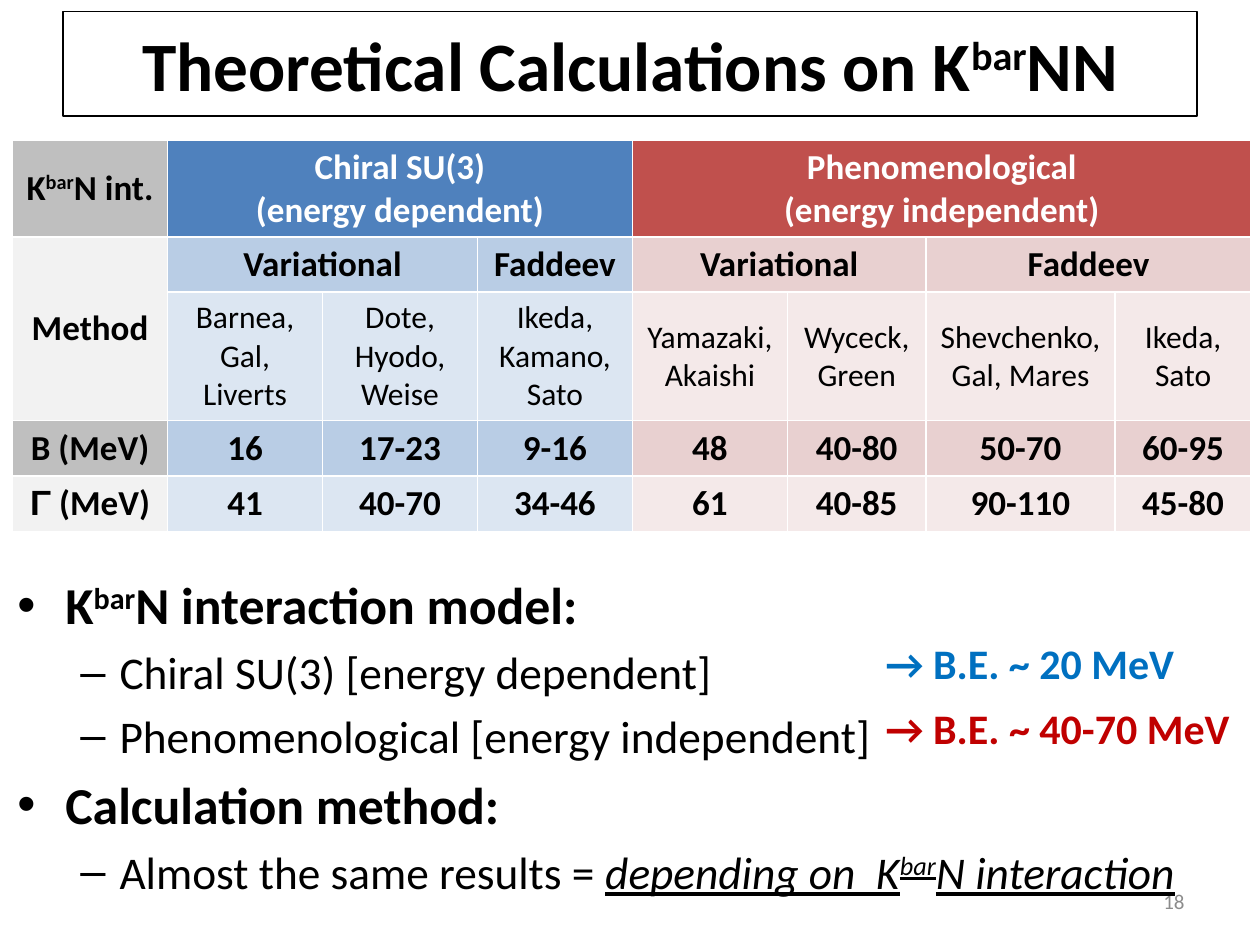
import pptx
import pptx.dml.color
import pptx.enum.text
import pptx.oxml
import pptx.oxml.ns
import pptx.util

Inches = pptx.util.Inches
Pt = pptx.util.Pt
RGBColor = pptx.dml.color.RGBColor
PP_ALIGN = pptx.enum.text.PP_ALIGN
MSO_ANCHOR = pptx.enum.text.MSO_ANCHOR
MSO_AUTO_SIZE = pptx.enum.text.MSO_AUTO_SIZE

BLACK = RGBColor(0x00, 0x00, 0x00)
WHITE = RGBColor(0xFF, 0xFF, 0xFF)
GRAY = RGBColor(0x8C, 0x8C, 0x8C)
BLUE = RGBColor(0x00, 0x70, 0xC0)
RED = RGBColor(0xC0, 0x00, 0x00)
LABEL_DARK = RGBColor(0xBF, 0xBF, 0xBF)
LABEL_LIGHT = RGBColor(0xF2, 0xF2, 0xF2)
CHIRAL = RGBColor(0x4F, 0x81, 0xBD)
CHIRAL_DARK = RGBColor(0xB9, 0xCD, 0xE5)
CHIRAL_LIGHT = RGBColor(0xDC, 0xE6, 0xF2)
PHENO = RGBColor(0xC0, 0x50, 0x4D)
PHENO_DARK = RGBColor(0xE8, 0xD0, 0xD0)
PHENO_LIGHT = RGBColor(0xF4, 0xE9, 0xE9)

TITLE = "Theoretical Calculations on K|^bar|NN"
ROWS = [
    ["K|^bar|N int.", "Chiral SU(3)\n(energy dependent)", None, None,
     "Phenomenological\n(energy independent)", None, None, None],
    ["Method", "Variational", None, "Faddeev", "Variational", None, "Faddeev", None],
    [None, "Barnea, Gal, Liverts", "Dote, Hyodo, Weise", "Ikeda, Kamano, Sato",
     "Yamazaki, Akaishi", "Wyceck, Green", "Shevchenko, Gal, Mares", "Ikeda, Sato"],
    ["B (MeV)", "16", "17-23", "9-16", "48", "40-80", "50-70", "60-95"],
    ["Γ| (MeV)", "41", "40-70", "34-46", "61", "40-85", "90-110", "45-80"],
]
MERGES = [((0, 1), (0, 3)), ((0, 4), (0, 7)), ((1, 0), (2, 0)),
          ((1, 1), (1, 2)), ((1, 4), (1, 5)), ((1, 6), (1, 7))]
COL_WIDTHS = [1.23, 1.23, 1.23, 1.23, 1.23, 1.1, 1.5, 1.08]
ROW_HEIGHTS = [0.77, 0.44, 1.02, 0.44, 0.44]
ROW_FILLS = [
    (LABEL_DARK, CHIRAL, PHENO),
    (LABEL_LIGHT, CHIRAL_DARK, PHENO_DARK),
    (LABEL_LIGHT, CHIRAL_LIGHT, PHENO_LIGHT),
    (LABEL_DARK, CHIRAL_DARK, PHENO_DARK),
    (LABEL_LIGHT, CHIRAL_LIGHT, PHENO_LIGHT),
]
NAMES_ROW = 2

BODY = [
    (0, "K|^bar|N interaction model:", ""),
    (1, "Chiral SU(3) [energy dependent]", ""),
    (1, "Phenomenological [energy independent]", ""),
    (0, "Calculation method:", ""),
    (1, "Almost the same results = ", "depending on  K|^bar|N interaction"),
]
LEVELS = [("•", 29.6, True, 0.38, -0.38), ("–", 25.9, False, 0.81, -0.31)]
RESULTS = [
    ("→ B.E. ~ 20 MeV", 5.01, 2.54, BLUE),
    ("→ B.E. ~ 40-70 MeV", 5.53, 2.98, RED),
]


def write(p, text, size, color=BLACK, bold=True, emphasis=False):
    for part in text.split("|"):
        r = p.add_run()
        r.text = part.lstrip("^")
        r.font.name = "Arial" if part == "Γ" else "Calibri"
        r.font.size = Pt(size)
        r.font.bold = bold
        r.font.color.rgb = color
        if emphasis:
            r.font.italic = True
            r.font.underline = True
        if part.startswith("^"):
            r.font._element.set("baseline", "30000")


def add_bullet(p, char, left, indent):
    pPr = p._p.get_or_add_pPr()
    pPr.set("marL", str(Inches(left)))
    pPr.set("indent", str(Inches(indent)))
    for tag, key, value in (("buFont", "typeface", "Arial"), ("buChar", "char", char)):
        xml = f'<a:{tag} {pptx.oxml.ns.nsdecls("a")} {key}="{value}"/>'
        pPr.append(pptx.oxml.parse_xml(xml))


def add_text_box(s, left, top, width, height, wrap=True):
    box = s.shapes.add_textbox(Inches(left), Inches(top), Inches(width), Inches(height))
    box.text_frame.word_wrap = wrap
    return box.text_frame


def add_title(s):
    sp = s.shapes.title
    sp.left, sp.top, sp.width, sp.height = (Inches(v) for v in (0.5, 0.09, 9, 0.83))
    sp.line.color.rgb = BLACK
    sp.line.width = Pt(0.75)
    tf = sp.text_frame
    tf.auto_size = MSO_AUTO_SIZE.NONE
    tf.vertical_anchor = MSO_ANCHOR.MIDDLE
    p = tf.paragraphs[0]
    p.alignment = PP_ALIGN.CENTER
    write(p, TITLE, 39.6)


def add_results_table(s):
    table = s.shapes.add_table(
        len(ROWS), len(COL_WIDTHS), Inches(0.1), Inches(1.11),
        Inches(sum(COL_WIDTHS)), Inches(sum(ROW_HEIGHTS))).table
    for col, width in zip(table.columns, COL_WIDTHS):
        col.width = Inches(width)
    for row, height in zip(table.rows, ROW_HEIGHTS):
        row.height = Inches(height)
    for first, last in MERGES:
        table.cell(*first).merge(table.cell(*last))
    for i, row in enumerate(ROWS):
        label, chiral, pheno = ROW_FILLS[i]
        fills = [label] + [chiral] * 3 + [pheno] * 4
        for j, text in enumerate(row):
            cell = table.cell(i, j)
            cell.fill.solid()
            cell.fill.fore_color.rgb = fills[j]
            if text is None:
                continue
            cell.vertical_anchor = MSO_ANCHOR.MIDDLE
            tf = cell.text_frame
            names = i == NAMES_ROW
            for n, line in enumerate(text.split("\n")):
                p = tf.add_paragraph() if n else tf.paragraphs[0]
                p.alignment = PP_ALIGN.CENTER
                write(p, line, 18 if names else 20,
                      WHITE if i == 0 and j else BLACK, not names)


def add_body(s):
    tf = add_text_box(s, 0.04, 4.5, 9.65, 2.76)
    for n, (level, text, emphasized) in enumerate(BODY):
        char, size, bold, left, indent = LEVELS[level]
        p = tf.add_paragraph() if n else tf.paragraphs[0]
        p.level = level
        if n:
            p.space_before = Pt(round(size * 0.2, 1))
        add_bullet(p, char, left, indent)
        write(p, text, size, bold=bold)
        if emphasized:
            write(p, emphasized, size, bold=bold, emphasis=True)


def main():
    prs = pptx.Presentation()
    prs.slide_width, prs.slide_height = Inches(10), Inches(7.5)
    s = prs.slides.add_slide(prs.slide_layouts[5])
    add_title(s)

    tf = add_text_box(s, 7.17, 6.95, 2.33, 0.4)
    tf.vertical_anchor = MSO_ANCHOR.MIDDLE
    tf.paragraphs[0].alignment = PP_ALIGN.RIGHT
    write(tf.paragraphs[0], "18", 12, GRAY, bold=False)

    add_results_table(s)
    add_body(s)
    for text, top, width, color in RESULTS:
        tf = add_text_box(s, 6.93, top, width, 0.5, wrap=False)
        tf.auto_size = MSO_AUTO_SIZE.SHAPE_TO_FIT_TEXT
        write(tf.paragraphs[0], text, 24, color)
    prs.save("out.pptx")


if __name__ == "__main__":
    main()
